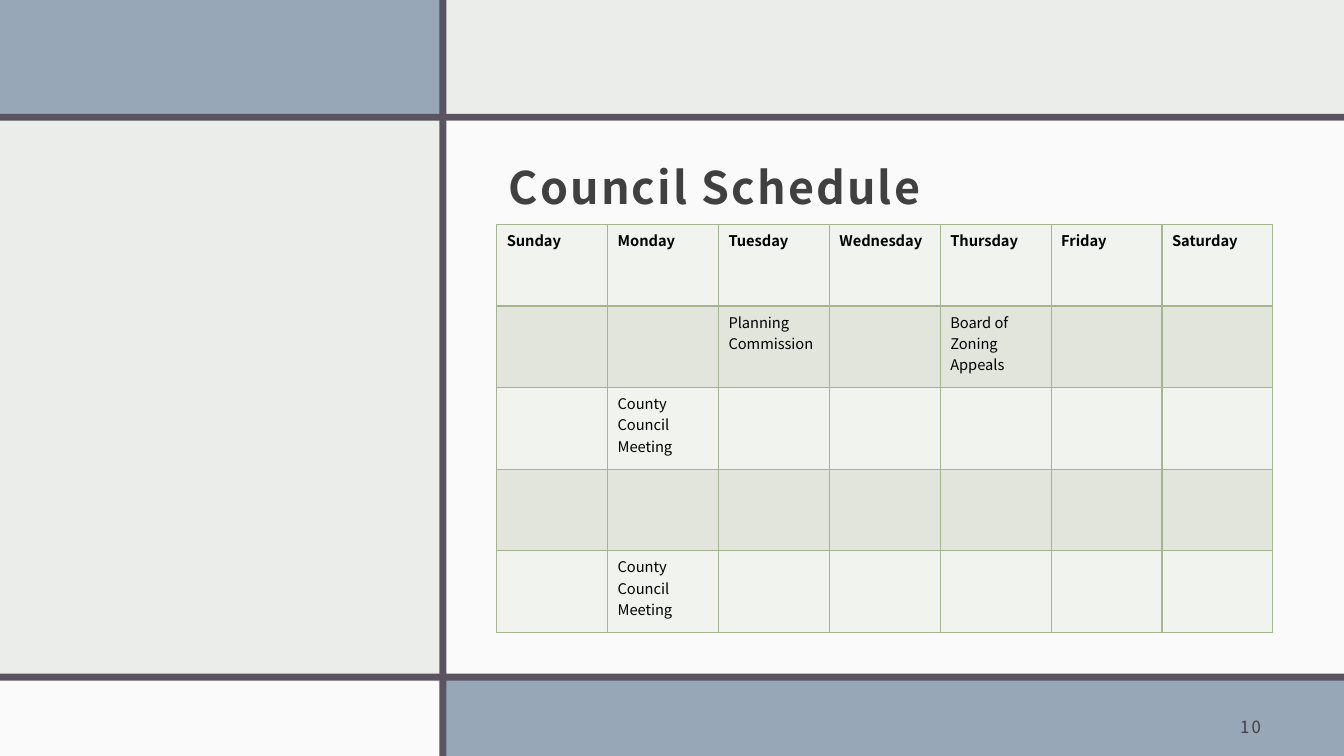
from lxml.etree import SubElement
from pptx import Presentation
from pptx.dml.color import RGBColor
from pptx.enum.shapes import MSO_SHAPE as Shape
from pptx.enum.text import MSO_ANCHOR as Anchor, PP_ALIGN as Align
from pptx.oxml.ns import qn
from pptx.util import Pt

FONT = "Noto Sans CJK JP"
BLUE, WHITE, BAR = "97A7B8", "FAFAFA", "595460"


def color(hex_string):
    return RGBColor.from_string(hex_string)


def format_run(run, size, hex_string, bold=False, spacing=0):
    run.font.name = FONT
    run.font.size = Pt(size)
    run.font.bold = bold
    run.font.color.rgb = color(hex_string)
    properties = run._r.get_or_add_rPr()
    SubElement(properties, qn("a:ea")).set("typeface", FONT)
    if spacing:
        properties.set("spc", str(round(spacing * 100)))


presentation = Presentation()
presentation.slide_width = Pt(960)
presentation.slide_height = Pt(540)
slide = presentation.slides.add_slide(presentation.slide_layouts[6])
slide.background.fill.solid()
slide.background.fill.fore_color.rgb = color("EBEDEB")

panels = [
    (0, 0, 316, 83.5, BLUE),
    (0, 81.3, 960, 5, BAR),
    (314, 86.3, 646, 395.3, WHITE),
    (318, 484, 642, 56, BLUE),
    (0, 485.3, 314, 54.7, WHITE),
    (0, 481.2, 960, 5, BAR),
    (313.9, 0, 5, 540, BAR),
]
for left, top, width, height, fill in panels:
    panel = slide.shapes.add_shape(Shape.RECTANGLE, Pt(left), Pt(top), Pt(width), Pt(height))
    panel.shadow.inherit = False
    panel.fill.solid()
    panel.fill.fore_color.rgb = color(fill)
    panel.line.fill.background()

labels = [
    ("Council Schedule", 354.8, 109.4, 554.4, 50.4, 32, True, Align.LEFT),
    ("10", 832.3, 496.8, 77, 36, 12, False, Align.RIGHT),
]
for text, left, top, width, height, size, bold, alignment in labels:
    label = slide.shapes.add_textbox(Pt(left), Pt(top), Pt(width), Pt(height))
    frame = label.text_frame
    frame.word_wrap = True
    frame.vertical_anchor = Anchor.BOTTOM
    frame.margin_left = frame.margin_right = frame.margin_top = Pt(8.64)
    frame.margin_bottom = Pt(7.2)
    frame.text = text
    paragraph = frame.paragraphs[0]
    paragraph.alignment = alignment
    format_run(paragraph.runs[0], size, "404040", bold, 1.5)

days = ["Sunday", "Monday", "Tuesday", "Wednesday", "Thursday", "Friday", "Saturday"]
meetings = {
    (1, 2): "Planning Commission",
    (1, 4): "Board of Zoning Appeals",
    (2, 1): "County Council Meeting",
    (4, 1): "County Council Meeting",
}
table = slide.shapes.add_table(5, 7, Pt(354.8), Pt(160.3), Pt(554.4), Pt(291.5)).table
for column in table.columns:
    column.width = Pt(79.2)
for row in table.rows:
    row.height = Pt(58.3)

for row_index in range(5):
    for column_index, day in enumerate(days):
        cell = table.cell(row_index, column_index)
        properties = cell._tc.get_or_add_tcPr()
        for side in ("lnL", "lnR", "lnT", "lnB"):
            border = SubElement(properties, qn(f"a:{side}"), w=str(Pt(1)))
            border_fill = SubElement(border, qn("a:solidFill"))
            SubElement(border_fill, qn("a:srgbClr"), val="A5B592")
        cell.fill.solid()
        cell.fill.fore_color.rgb = color("E1E5DC" if row_index % 2 else "F0F3EE")
        text = day if row_index == 0 else meetings.get((row_index, column_index))
        if text:
            cell.text_frame.text = text
            format_run(cell.text_frame.paragraphs[0].runs[0], 10.5, "000000", row_index == 0)

presentation.save("out.pptx")
